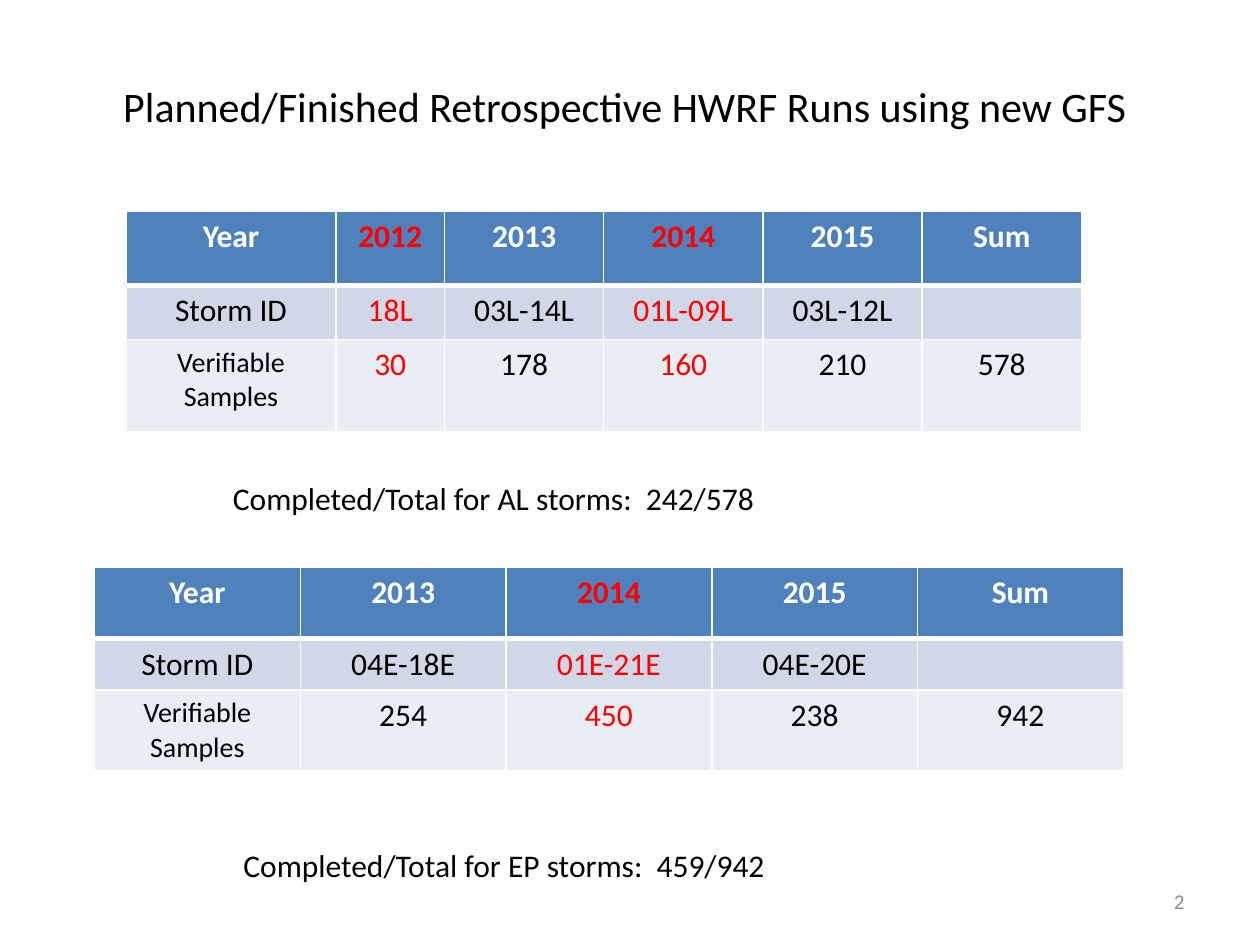
from typing import NamedTuple

from lxml.etree import SubElement
from pptx import Presentation
from pptx.dml.color import RGBColor
from pptx.enum.text import MSO_ANCHOR, PP_ALIGN
from pptx.oxml.ns import qn
from pptx.util import Pt

FONT = "Calibri"
BLACK, WHITE, RED, GREY = "000000", "FFFFFF", "FF0000", "8C8C8C"
FILLS = ["4F81BD", "D0D8E8", "E9EDF4"]
RED_YEARS = {"2012", "2014"}


class Box(NamedTuple):
    left: float
    top: float
    width: float
    height: float


class Grid(NamedTuple):
    left: float
    top: float
    cols: list[float]
    rows: list[float]
    data: list[list[str]]


class Note(NamedTuple):
    box: Box
    text: str
    size: float = 18
    color: str = BLACK
    align: PP_ALIGN = PP_ALIGN.LEFT
    anchor: MSO_ANCHOR = MSO_ANCHOR.TOP


GRIDS = [
    Grid(72, 120.5, [120, 62] + [91] * 4, [42.5, 31, 53], [
        ["Year", "2012", "2013", "2014", "2015", "Sum"],
        ["Storm ID", "18L", "03L-14L", "01L-09L", "03L-12L", ""],
        ["Verifiable Samples", "30", "178", "160", "210", "578"],
    ]),
    Grid(54, 324, [117.6] * 5, [41, 29, 46], [
        ["Year", "2013", "2014", "2015", "Sum"],
        ["Storm ID", "04E-18E", "01E-21E", "04E-20E", ""],
        ["Verifiable Samples", "254", "450", "238", "942"],
    ]),
]

TITLE = Note(Box(36, 42.5, 642, 36),
             "Planned/Finished Retrospective HWRF Runs using new GFS",
             24, align=PP_ALIGN.CENTER)

NOTES = [
    Note(Box(126, 270, 420, 29), "Completed/Total for AL storms:  242/578"),
    Note(Box(132, 480, 420, 29), "Completed/Total for EP storms:  459/942"),
    Note(Box(516, 500.5, 168, 29), "2", 12, GREY,
         PP_ALIGN.RIGHT, MSO_ANCHOR.MIDDLE),
]


def rgb(color: str) -> RGBColor:
    return RGBColor.from_string(color)


def add_run(para, text: str, size: float, color: str, bold: bool = False) -> None:
    run = para.add_run()
    run.text = text
    font = run.font
    font.name, font.size, font.bold = FONT, Pt(size), bold
    font.color.rgb = rgb(color)


def add_edges(cell, row: int) -> None:
    """Draw white cell borders, thick where the header meets the body."""
    props = cell._tc.get_or_add_tcPr()
    top = 3 if row == 1 else 1
    base = 3 if row == 0 else 1
    for side, width in (("L", 1), ("R", 1), ("T", top), ("B", base)):
        line = SubElement(props, qn(f"a:ln{side}"), w=str(Pt(width)))
        fill = SubElement(line, qn("a:solidFill"))
        SubElement(fill, qn("a:srgbClr"), val=WHITE)


def draw_cell(cell, text: str, row: int, col: int, year: str) -> None:
    add_edges(cell, row)
    cell.fill.solid()
    cell.fill.fore_color.rgb = rgb(FILLS[row])
    if not text:
        return
    para = cell.text_frame.paragraphs[0]
    para.alignment = PP_ALIGN.CENTER
    head = row == 0
    color = RED if year in RED_YEARS else WHITE if head else BLACK
    size = 16 if row == 2 and col == 0 else 18
    add_run(para, text, size, color, head)


def draw_grid(slide, grid: Grid) -> None:
    table = slide.shapes.add_table(
        len(grid.rows), len(grid.cols), Pt(grid.left), Pt(grid.top),
        Pt(sum(grid.cols)), Pt(sum(grid.rows))).table
    for col, width in zip(table.columns, grid.cols):
        col.width = Pt(width)
    for row, height in zip(table.rows, grid.rows):
        row.height = Pt(height)
    years = grid.data[0]
    for r, line in enumerate(grid.data):
        for c, text in enumerate(line):
            draw_cell(table.cell(r, c), text, r, c, years[c])


def fill_text(shape, note: Note) -> None:
    frame = shape.text_frame
    frame.word_wrap = True
    frame.vertical_anchor = note.anchor
    para = frame.paragraphs[0]
    para.alignment = note.align
    add_run(para, note.text, note.size, note.color)


def draw_title(slide, note: Note) -> None:
    title = slide.shapes.title
    title.left, title.top, title.width, title.height = map(Pt, note.box)
    fill_text(title, note)


def draw_note(slide, note: Note) -> None:
    fill_text(slide.shapes.add_textbox(*map(Pt, note.box)), note)


def main() -> None:
    deck = Presentation()
    deck.slide_width, deck.slide_height = Pt(720), Pt(540)
    slide = deck.slides.add_slide(deck.slide_layouts.get_by_name("Title Only"))
    draw_title(slide, TITLE)
    for grid in GRIDS:
        draw_grid(slide, grid)
    for note in NOTES:
        draw_note(slide, note)
    deck.save("out.pptx")


if __name__ == "__main__":
    main()
